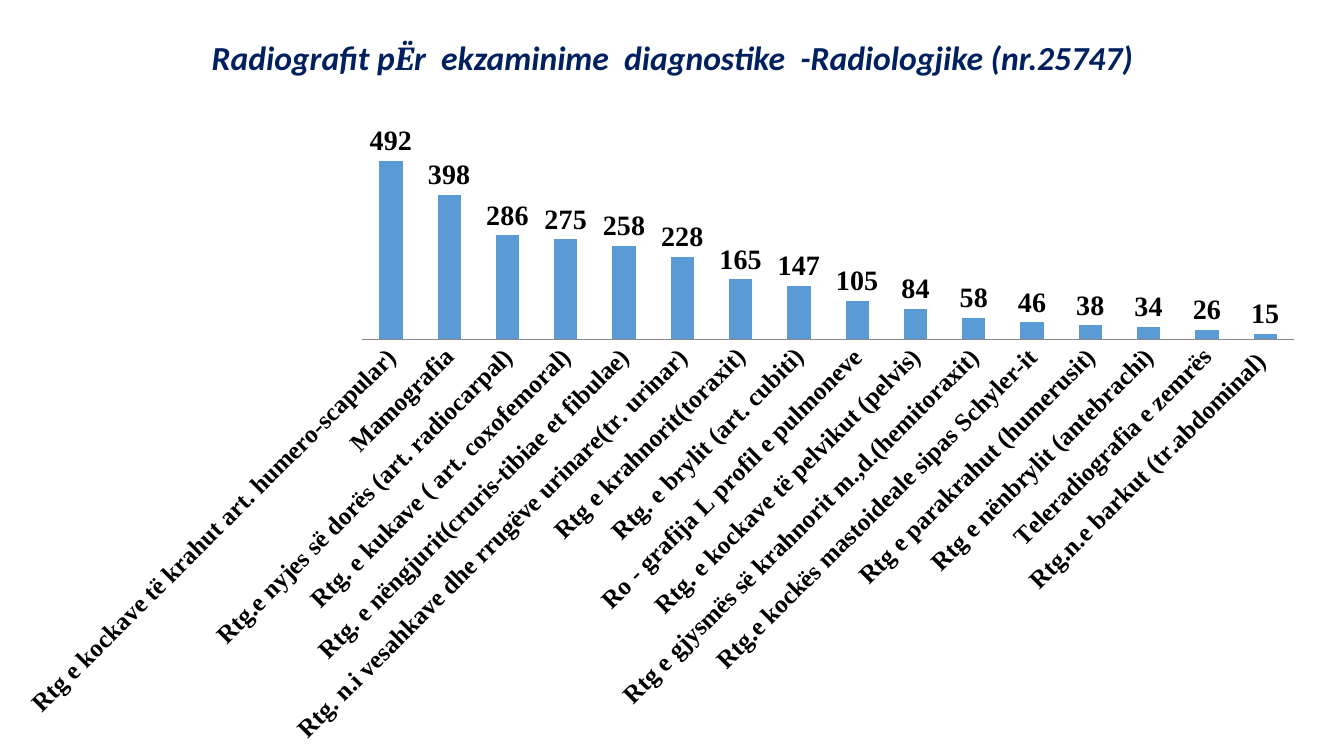
import pptx
import pptx.util
import pptx.dml.color
import pptx.chart.data
import pptx.enum.chart
import pptx.enum.text

Inches = pptx.util.Inches
LABEL_FONT = "Times New Roman"
EXAMS = [
    ("Rtg e kockave të krahut art. humero-scapular)", 492),
    ("Mamografia", 398),
    ("Rtg.e nyjes së dorës (art. radiocarpal)", 286),
    ("Rtg. e kukave ( art. coxofemoral)", 275),
    ("Rtg. e nëngjurit(cruris-tibiae et fibulae)", 258),
    ("Rtg. n.i vesahkave dhe rrugëve urinare(tr. urinar)", 228),
    ("Rtg e krahnorit(toraxit)", 165),
    ("Rtg. e brylit (art. cubiti)", 147),
    ("Ro - grafija L profil e pulmoneve", 105),
    ("Rtg. e kockave të pelvikut (pelvis)", 84),
    ("Rtg e gjysmës së krahnorit m.,d.(hemitoraxit)", 58),
    ("Rtg.e kockës mastoideale sipas Schyler-it", 46),
    ("Rtg e parakrahut (humerusit)", 38),
    ("Rtg e nënbrylit (antebrachi)", 34),
    ("Teleradiografia e zemrës", 26),
    ("Rtg.n.e barkut (tr.abdominal) ", 15),
]


def rgb(value):
    return pptx.dml.color.RGBColor.from_string(value)


def format_font(font, name, size, color="000000", bold=False, italic=False):
    font.name = name
    font.size = pptx.util.Pt(size)
    font.color.rgb = rgb(color)
    font.bold = bold
    font.italic = italic


def add_text(p, text, **fmt):
    r = p.add_run()
    r.text = text
    format_font(r.font, **fmt)


def add_title(s, left, top, width, height):
    sp = s.shapes.title
    sp.left, sp.top, sp.width, sp.height = map(Inches, (left, top, width, height))
    tf = sp.text_frame
    tf.word_wrap = True
    tf.vertical_anchor = pptx.enum.text.MSO_ANCHOR.MIDDLE
    p = tf.paragraphs[0]
    p.alignment = pptx.enum.text.PP_ALIGN.CENTER
    p.line_spacing = 0.9
    for text, name in (
        ("Radiografit p", "Calibri"),
        ("Ë", "Cambria"),
        ("r  ekzaminime  diagnostike  -Radiologjike (nr.25747)", "Calibri"),
    ):
        add_text(p, text, name=name, size=24, color="002060", bold=True, italic=True)


def style_axes(chart):
    axis = chart.category_axis
    axis.major_tick_mark = pptx.enum.chart.XL_TICK_MARK.NONE
    axis.has_major_gridlines = False
    axis.format.line.color.rgb = rgb("898989")
    axis.format.line.width = pptx.util.Pt(0.75)
    format_font(axis.tick_labels.font, LABEL_FONT, 18, bold=True)
    axis._element.txPr.bodyPr.set("rot", "-2700000")
    chart.value_axis.has_major_gridlines = False
    chart.value_axis.visible = False


def add_exam_chart(s, left, top, width, height):
    data = pptx.chart.data.CategoryChartData()
    data.categories = [name for name, count in EXAMS]
    data.add_series("Series 1", [count for name, count in EXAMS])
    kind = pptx.enum.chart.XL_CHART_TYPE.COLUMN_CLUSTERED
    box = map(Inches, (left, top, width, height))
    chart = s.shapes.add_chart(kind, *box, data).chart
    chart.has_title = False
    chart.has_legend = False
    format_font(chart.font, "Calibri", 10)
    style_axes(chart)
    plot = chart.plots[0]
    plot.vary_by_categories = False
    plot.gap_width = 150
    plot.overlap = -25
    fill = plot.series[0].format.fill
    fill.solid()
    fill.fore_color.rgb = rgb("5B9BD5")
    plot.has_data_labels = True
    labels = plot.data_labels
    labels.show_value = True
    labels.position = pptx.enum.chart.XL_LABEL_POSITION.OUTSIDE_END
    format_font(labels.font, LABEL_FONT, 20, bold=True)


def main():
    prs = pptx.Presentation()
    prs.slide_width, prs.slide_height = Inches(13.33), Inches(7.5)
    s = prs.slides.add_slide(prs.slide_layouts[5])
    add_exam_chart(s, 0, 1.08, 13.1, 6.42)
    add_title(s, 0.92, 0.18, 11.5, 0.83)
    prs.save("out.pptx")


if __name__ == "__main__":
    main()
